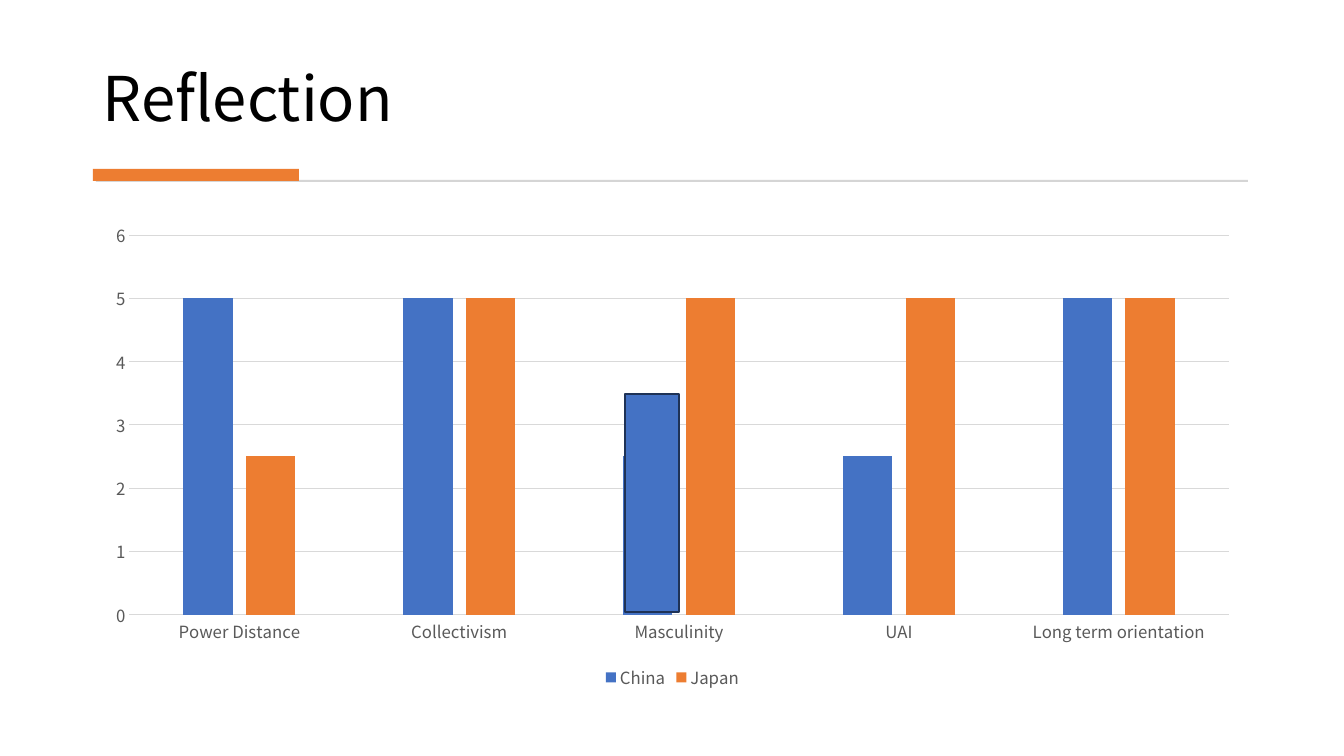
from pptx import Presentation
from pptx.chart.data import CategoryChartData
from pptx.dml.color import RGBColor
from pptx.enum.chart import XL_CHART_TYPE as CHART, XL_LEGEND_POSITION as LEGEND, XL_TICK_MARK as TICK
from pptx.enum.shapes import MSO_SHAPE as SHAPE
from pptx.enum.text import MSO_ANCHOR as ANCHOR
from pptx.util import Pt

FONT = "Noto Sans CJK JP"
BLUE, ORANGE, GRID, GREY = "4472C4", "ED7D31", "D9D9D9", "595959"


def px(*lengths):
    return [round(n * 914400 / 100.8) for n in lengths]


def rgb(color):
    return RGBColor.from_string(color)


prs = Presentation()
prs.slide_width, prs.slide_height = px(1344, 756)
s = prs.slides.add_slide(prs.slide_layouts[6])

tf = s.shapes.add_textbox(*px(93, 28, 1158, 112)).text_frame
tf.word_wrap = True
tf.vertical_anchor = ANCHOR.BOTTOM
p = tf.paragraphs[0]
p.line_spacing = 0.9
r = p.add_run()
r.text = "Reflection"
title_font = r.font

data = CategoryChartData()
data.categories = ["Power Distance", "Collectivism", "Masculinity", "UAI", "Long term orientation"]
data.add_series("China", [5, 5, 2.5, 2.5, 5])
data.add_series("Japan", [2.5, 5, 5, 5, 5])

rule = s.shapes.add_shape(SHAPE.RECTANGLE, *px(96, 180, 1152, 2))
accent = s.shapes.add_shape(SHAPE.RECTANGLE, *px(93, 169, 206, 12))
chart = s.shapes.add_chart(CHART.COLUMN_CLUSTERED, *px(93, 213, 1159, 481), data).chart
china_bar = s.shapes.add_shape(SHAPE.RECTANGLE, *px(625, 394, 54, 218))

for sp, color in [(rule, "D5D5D5"), (accent, ORANGE), (china_bar, BLUE)]:
    sp.shadow.inherit = False
    sp.fill.solid()
    sp.fill.fore_color.rgb = rgb(color)
    sp.line.fill.background()
china_bar.line.color.rgb = rgb("1E3256")
china_bar.line.width = Pt(1)

chart.has_title = False
chart.has_legend = True
chart.legend.position = LEGEND.BOTTOM
chart.legend.include_in_layout = False

plot = chart.plots[0]
for name, value in {"gap_width": 219, "overlap": -27, "vary_by_categories": False}.items():
    setattr(plot, name, value)
for series, color in zip(plot.series, [BLUE, ORANGE]):
    series.format.fill.solid()
    series.format.fill.fore_color.rgb = rgb(color)

cat, val = chart.category_axis, chart.value_axis
for axis in (cat, val):
    axis.major_tick_mark = axis.minor_tick_mark = TICK.NONE
for name, value in {"minimum_scale": 0, "maximum_scale": 6, "major_unit": 1}.items():
    setattr(val, name, value)
val.format.line.fill.background()
for line in (cat.format.line, val.major_gridlines.format.line):
    line.color.rgb = rgb(GRID)
    line.width = Pt(0.75)

for font, size, color in [
    (title_font, 44, "000000"),
    (chart.font, 10, "000000"),
    (cat.tick_labels.font, 12, GREY),
    (val.tick_labels.font, 12, GREY),
    (chart.legend.font, 12, GREY),
]:
    for name, value in {"name": FONT, "size": Pt(size), "bold": False}.items():
        setattr(font, name, value)
    font.color.rgb = rgb(color)

prs.save("out.pptx")
